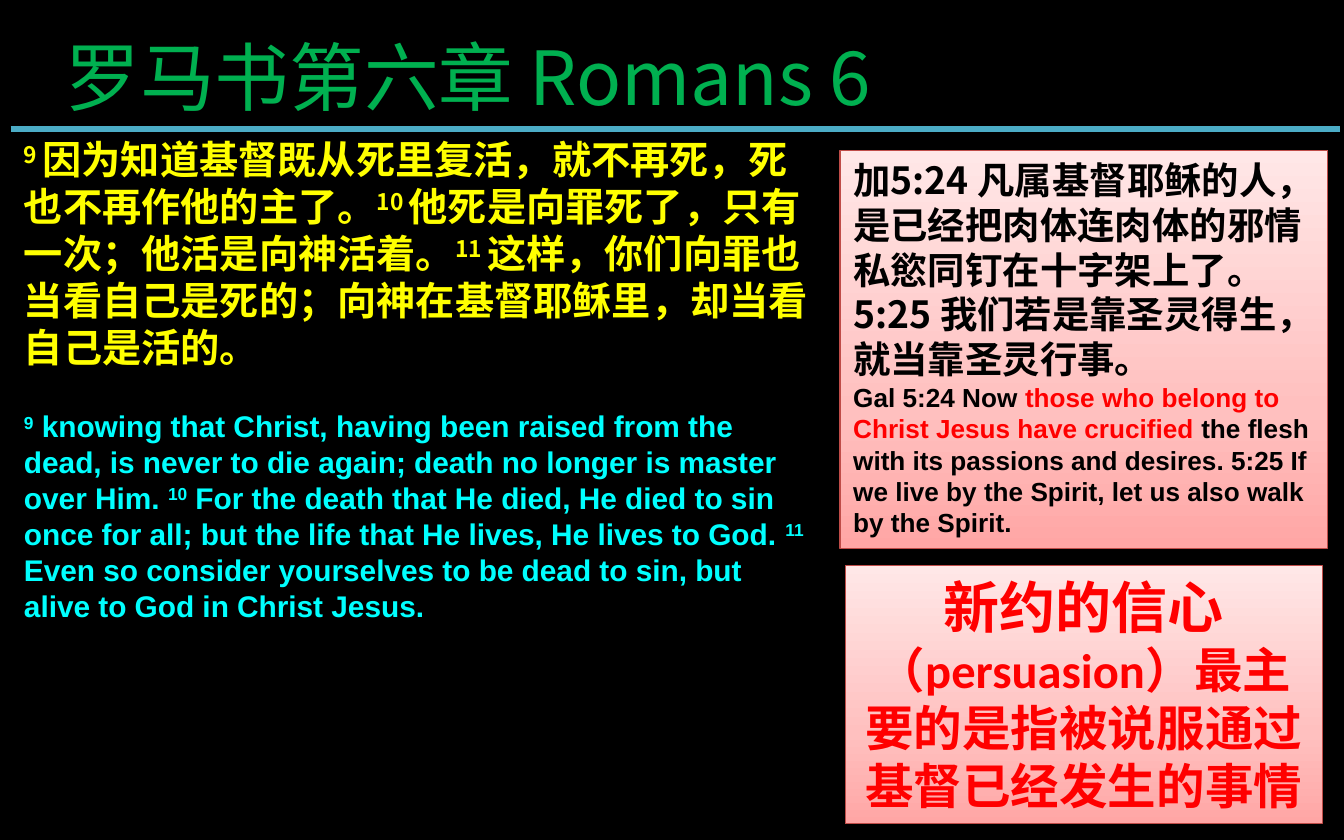
"""Build the Romans 6 scripture slide."""
from dataclasses import dataclass

from lxml import etree
from pptx import Presentation
from pptx import util as u
from pptx.dml.color import RGBColor
from pptx.enum import shapes, text
from pptx.oxml import ns


@dataclass(frozen=True)
class Theme:
    black: str = "000000"
    green: str = "00B050"
    yellow: str = "FFFF00"
    cyan: str = "00FFFF"
    red: str = "FF0000"
    rule: str = "4BACC6"
    border: str = "BF4C48"
    pinks: tuple = ((0, "FFA6A5"), (35, "FFC0BF"), (100, "FFE7E7"))
    chinese: str = "Noto Sans CJK SC"
    english: str = "Arial"
    accent: str = "Calibri"
    title: int = 40
    headline: int = 30
    summary: int = 26
    verse: int = 21
    reference: int = 20
    translation: int = 16
    small: int = 14


def add_run(paragraph, content, *, size, color, font, bold=True, raised=False):
    run = paragraph.add_run()
    run.text = content
    run.font.size = u.Pt(size)
    run.font.bold = bold
    run.font.name = font
    run.font.color.rgb = RGBColor.from_string(color)
    props = run.font._element
    if raised:
        props.set("baseline", "30000")
    east_asian = etree.Element(ns.qn("a:ea"), typeface=Theme.chinese)
    props.find(ns.qn("a:latin")).addnext(east_asian)


class SlideBuilder:
    def __init__(self, slide, theme):
        self.slide = slide
        self.theme = theme
        slide.background.fill.solid()
        slide.background.fill.fore_color.rgb = RGBColor.from_string(theme.black)

    def rule(self, left, right, top):
        line = self.slide.shapes.add_connector(
            shapes.MSO_CONNECTOR.STRAIGHT,
            u.Inches(left), u.Inches(top), u.Inches(right), u.Inches(top))
        line.line.color.rgb = RGBColor.from_string(self.theme.rule)
        line.line.width = u.Pt(3)
        etree.SubElement(line._element.spPr, ns.qn("a:effectLst"))

    def fill_text(self, frame, paragraphs, wrap=True, align=text.PP_ALIGN.LEFT, gap=0):
        frame.word_wrap = wrap
        frame.vertical_anchor = text.MSO_ANCHOR.TOP
        for index, runs in enumerate(paragraphs):
            paragraph = frame.add_paragraph() if index else frame.paragraphs[0]
            paragraph.alignment = align
            paragraph.space_before = u.Pt(gap if index else 0)
            for content, style in runs:
                add_run(paragraph, content, **style)

    def textbox(self, box, paragraphs, **layout):
        area = self.slide.shapes.add_textbox(*map(u.Inches, box))
        self.fill_text(area.text_frame, paragraphs, **layout)

    def card(self, box, paragraphs, **layout):
        panel = self.slide.shapes.add_shape(
            shapes.MSO_SHAPE.RECTANGLE, *map(u.Inches, box))
        panel.shadow.inherit = False
        panel.line.color.rgb = RGBColor.from_string(self.theme.border)
        panel.line.width = u.Pt(0.75)
        panel.fill.gradient()
        panel.fill.gradient_angle = 90
        stops = panel._element.spPr.find(".//" + ns.qn("a:gsLst"))
        for stop in list(stops):
            stops.remove(stop)
        for percent, color in self.theme.pinks:
            stop = etree.SubElement(stops, ns.qn("a:gs"), pos=str(percent * 1000))
            etree.SubElement(stop, ns.qn("a:srgbClr"), val=color)
        self.fill_text(panel.text_frame, paragraphs, **layout)


def numbered(verses, **style):
    return [(part, dict(style, raised=index == 0))
            for verse in verses for index, part in enumerate(verse)]


def main():
    theme = Theme()
    deck = Presentation()
    deck.slide_width, deck.slide_height = u.Inches(10), u.Inches(6.25)
    page = SlideBuilder(deck.slides.add_slide(deck.slide_layouts[6]), theme)

    page.rule(0.08, 9.97, 0.96)
    heading = dict(size=theme.title, color=theme.green, font=theme.chinese, bold=False)
    page.textbox((0.39, 0.18, 6.38, 0.77),
                 [[("罗马书第六章 Romans 6", heading)]], wrap=False)

    chinese_verses = numbered([
        ("9 ", "因为知道基督既从死里复活，就不再死，死也不再作他的主了。"),
        ("10 ", "他死是向罪死了，只有一次；他活是向神活着。"),
        ("11 ", "这样，你们向罪也当看自己是死的；向神在基督耶稣里，却当看自己是活的。"),
    ], size=theme.verse, color=theme.yellow, font=theme.chinese)
    english_verses = numbered([
        ("9", " knowing that Christ, having been raised from the dead, is never to die "
              "again; death no longer is master over Him. "),
        ("10", " For the death that He died, He died to sin once for all; but the life "
               "that He lives, He lives to God. "),
        ("11", " Even so consider yourselves to be dead to sin, but alive to God in "
               "Christ Jesus."),
    ], size=theme.translation, color=theme.cyan, font=theme.english)
    page.textbox((0.08, 0.96, 6.08, 4.47), [chinese_verses, english_verses], gap=20)

    reference = dict(size=theme.reference, color=theme.black, font=theme.chinese)
    galatians = dict(size=theme.small, color=theme.black, font=theme.english)
    page.card((6.25, 1.12, 3.63, 2.96), [
        [("加5:24 凡属基督耶稣的人，是已经把肉体连肉体的邪情私慾同钉在十字架上了。"
          "5:25 我们若是靠圣灵得生，就当靠圣灵行事。", reference)],
        [("Gal 5:24 Now ", galatians),
         ("those who belong to Christ Jesus have crucified ",
          dict(galatians, color=theme.red)),
         ("the flesh with its passions and desires. 5:25 If we live by the Spirit, "
          "let us also walk by the Spirit.", galatians)],
    ])

    summary = dict(size=theme.summary, color=theme.red, font=theme.chinese)
    page.card((6.29, 4.21, 3.55, 1.92), [[
        ("新约的信心", dict(summary, size=theme.headline)),
        ("（persuasion）", dict(summary, font=theme.accent)),
        ("最主要的是指被说服通过基督已经发生的事情", summary),
    ]], align=text.PP_ALIGN.CENTER)

    deck.save("out.pptx")


if __name__ == "__main__":
    main()
